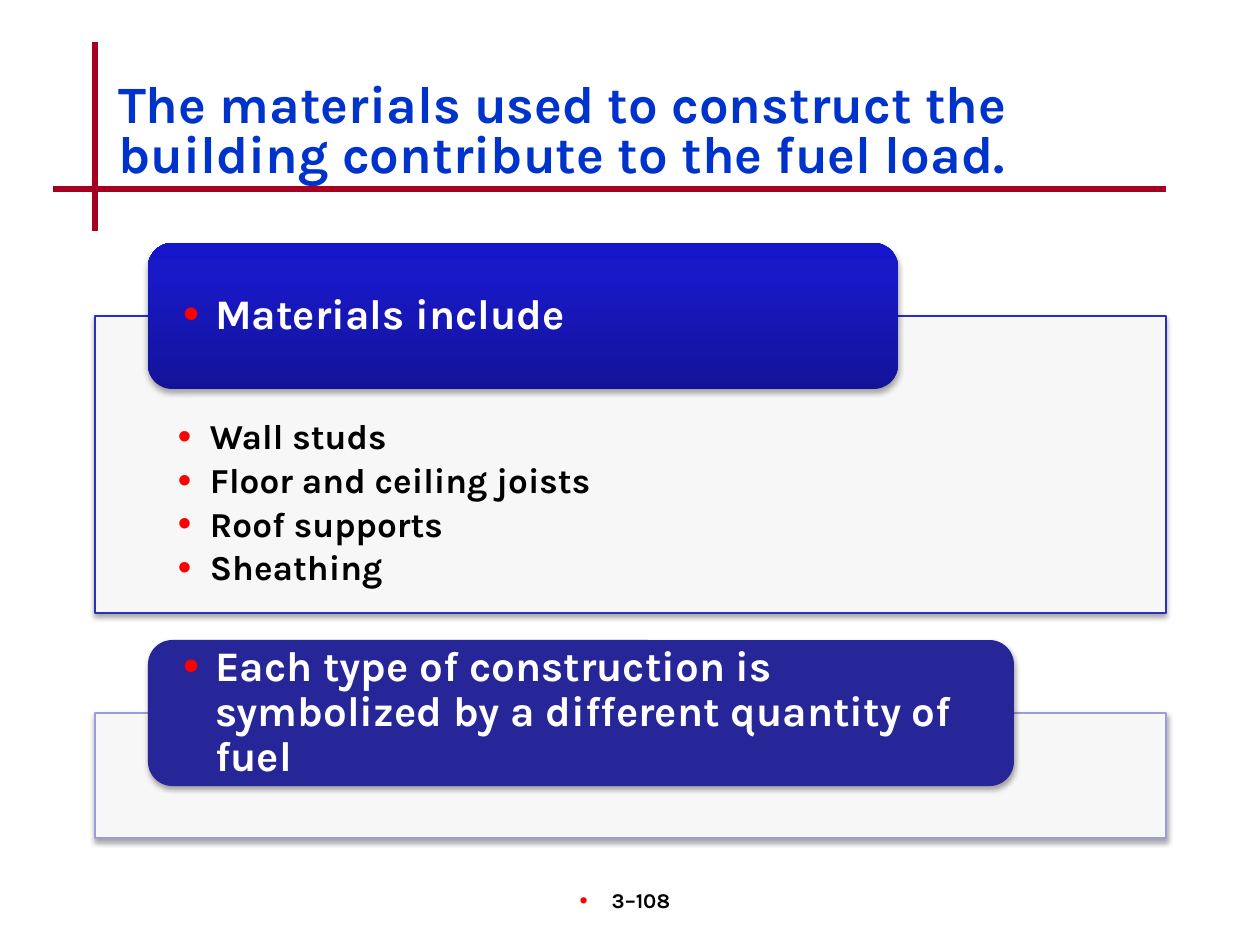
from copy import deepcopy
from dataclasses import dataclass

from lxml import etree
from pptx import Presentation
from pptx import util as u
from pptx.dml.color import RGBColor
from pptx.enum import shapes, text
from pptx.oxml import parse_xml
from pptx.oxml.ns import nsdecls, qn

EMU_PER_PX = 914400 / 126
SHADOW = (
    f'<a:effectLst {nsdecls("a")}>'
    '<a:outerShdw blurRad="40000" dist="23000" dir="5400000" rotWithShape="0">'
    '<a:srgbClr val="000000"><a:alpha val="35000"/></a:srgbClr>'
    "</a:outerShdw></a:effectLst>"
)


@dataclass(frozen=True)
class Theme:
    font: str = "Karla"
    title: str = "0033CC"
    rule: str = "A50021"
    body: str = "000000"
    heading: str = "FFFFFF"
    bullet: str = "FF0000"
    panel: str = "F7F7F7"
    panel_lines: tuple = ("2E2EB9", "9C9CDD")
    gradient: tuple = ((0, "13139A"), (0.8, "1919C8"), (1, "1515CC"))
    solid_heading: str = "262699"
    title_size: int = 30
    heading_size: int = 24
    body_size: int = 20
    footer_size: int = 12


def px(value):
    return u.Emu(round(value * EMU_PER_PX))


def rgb(value):
    return RGBColor.from_string(value)


def add_bullet(paragraph, color, indent):
    properties = paragraph._p.get_or_add_pPr()
    properties.set("marL", str(px(indent)))
    properties.set("indent", str(-px(indent)))
    bullet_color = etree.SubElement(properties, qn("a:buClr"))
    etree.SubElement(bullet_color, qn("a:srgbClr")).set("val", color)
    etree.SubElement(properties, qn("a:buSzPct")).set("val", "110000")
    etree.SubElement(properties, qn("a:buFont")).set("typeface", "Arial")
    etree.SubElement(properties, qn("a:buChar")).set("char", "•")


def write(shape, lines, *, font, size, color, align=text.PP_ALIGN.LEFT,
          anchor=text.MSO_ANCHOR.TOP, insets=(13, 6, 13, 6), spacing=1.0,
          after=0, bullet=None, indent=32):
    """Fill a shape with one paragraph per line; insets are left, top, right, bottom."""
    frame = shape.text_frame
    frame.word_wrap = True
    frame.auto_size = text.MSO_AUTO_SIZE.NONE
    frame.vertical_anchor = anchor
    (frame.margin_left, frame.margin_top,
     frame.margin_right, frame.margin_bottom) = map(px, insets)
    for index, line in enumerate(lines):
        paragraph = frame.add_paragraph() if index else frame.paragraphs[0]
        paragraph.alignment = align
        paragraph.line_spacing = spacing
        paragraph.space_before = u.Pt(0)
        paragraph.space_after = u.Pt(after)
        if bullet:
            add_bullet(paragraph, bullet, indent)
        run = paragraph.add_run()
        run.text = line
        run.font.name = font
        run.font.size = u.Pt(size)
        run.font.bold = True
        run.font.color.rgb = rgb(color)


class SlideBuilder:
    def __init__(self, slide, theme):
        self.slide = slide
        self.theme = theme

    def title(self, box, line):
        shape = self.slide.shapes.title
        shape.left, shape.top, shape.width, shape.height = map(px, box)
        write(shape, [line], font=self.theme.font, size=self.theme.title_size,
              color=self.theme.title, spacing=0.8)

    def rule(self, *ends):
        line = self.slide.shapes.add_connector(
            shapes.MSO_CONNECTOR.STRAIGHT, *map(px, ends))
        line.line.color.rgb = rgb(self.theme.rule)
        line.line.width = u.Pt(3)
        etree.SubElement(line._element.spPr, qn("a:effectLst"))

    def shadowed(self, kind, box):
        shape = self.slide.shapes.add_shape(kind, *map(px, box))
        shape.line.fill.background()
        shape._element.spPr.append(parse_xml(SHADOW))
        return shape

    def panel(self, box, line_color, items=()):
        shape = self.shadowed(shapes.MSO_SHAPE.RECTANGLE, box)
        shape.fill.solid()
        shape.fill.fore_color.rgb = rgb(self.theme.panel)
        shape.line.color.rgb = rgb(line_color)
        shape.line.width = u.Pt(0.75)
        write(shape, items, font=self.theme.font, size=self.theme.body_size,
              color=self.theme.body, insets=(83, 103, 83, 20), spacing=0.9,
              after=3.5, bullet=self.theme.bullet)

    def heading(self, box, line, gradient=False):
        shape = self.shadowed(shapes.MSO_SHAPE.ROUNDED_RECTANGLE, box)
        if gradient:
            self.fill_gradient(shape)
        else:
            shape.fill.solid()
            shape.fill.fore_color.rgb = rgb(self.theme.solid_heading)
        write(shape, [line], font=self.theme.font, size=self.theme.heading_size,
              color=self.theme.heading, anchor=text.MSO_ANCHOR.MIDDLE,
              insets=(28, 0, 28, 0), spacing=0.9, bullet=self.theme.bullet)

    def fill_gradient(self, shape):
        shape.fill.gradient()
        shape.fill.gradient_angle = 90
        stop_list = shape._element.spPr.find(".//" + qn("a:gsLst"))
        stop_list.append(deepcopy(stop_list[-1]))
        for stop, (position, color) in zip(shape.fill.gradient_stops, self.theme.gradient):
            stop.position = position
            stop.color.rgb = rgb(color)

    def footer(self, box, line):
        shape = self.slide.shapes.add_textbox(*map(px, box))
        write(shape, [line], font=self.theme.font, size=self.theme.footer_size,
              color=self.theme.body, align=text.PP_ALIGN.CENTER,
              bullet=self.theme.bullet)


def main():
    presentation = Presentation()
    presentation.slide_width, presentation.slide_height = u.Inches(10), u.Inches(7.5)
    slide = presentation.slides.add_slide(presentation.slide_layouts[5])
    theme = Theme()
    builder = SlideBuilder(slide, theme)

    builder.rule(95, 42, 95, 231)
    builder.rule(53, 189, 1166, 189)
    builder.title((105, 77, 1071, 126),
                  "The materials used to construct the building contribute to the fuel load.")

    materials = ["Wall studs", "Floor and ceiling joists", "Roof supports", "Sheathing"]
    sections = [
        (243, 750, 297, "Materials include", materials),
        (640, 866, 125, "Each type of construction is symbolized by a different "
                        "quantity of fuel", []),
    ]
    heading_height = 146
    for index, (top, width, panel_height, heading, items) in enumerate(sections):
        builder.panel((95, top + heading_height // 2, 1071, panel_height),
                      theme.panel_lines[index], items)
        builder.heading((148, top, width, heading_height), heading, gradient=index == 0)

    builder.footer((494, 882, 262, 63), "3–108")
    presentation.save("out.pptx")


if __name__ == "__main__":
    main()
